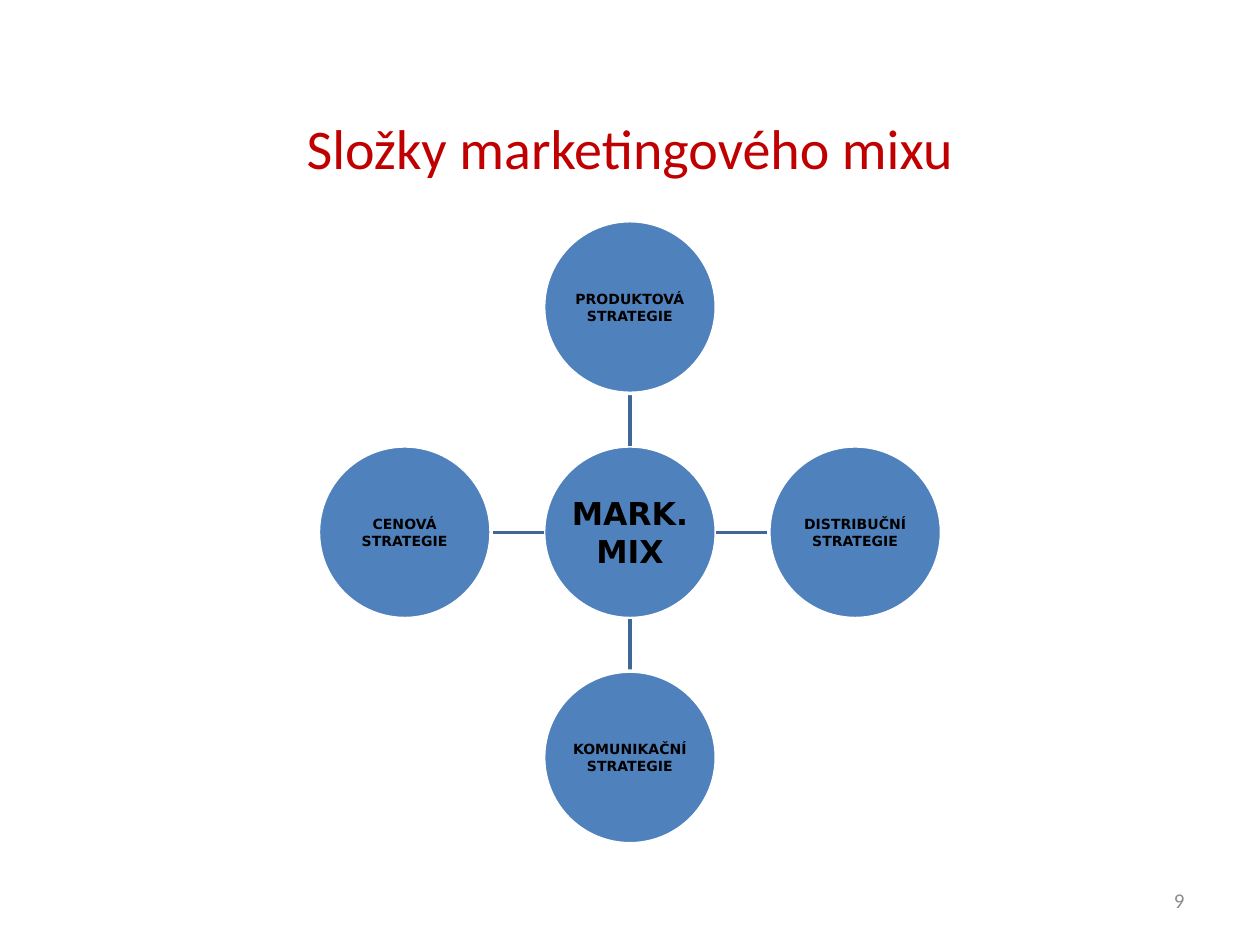
from lxml import etree
from pptx import Presentation
from pptx.dml.color import RGBColor
from pptx.enum import shapes, text
from pptx.oxml.ns import qn
from pptx.util import Cm, Pt

CENTER_X, CENTER_Y = 12.7, 10.73
DIAMETER = 3.48
SPACING = 4.54  # between the centres of neighbouring circles

# Direction from the hub, lines of the label
SPOKES = [
    (0, -1, ["PRODUKTOVÁ", "STRATEGIE"]),
    (1, 0, ["DISTRIBUČNÍ STRATEGIE"]),
    (0, 1, ["KOMUNIKAČNÍ", "STRATEGIE"]),
    (-1, 0, ["CENOVÁ", "STRATEGIE"]),
]


def color(value):
    return RGBColor.from_string(value)


def write(shape, lines, size, font, hue, align, bold=False):
    frame = shape.text_frame
    frame.word_wrap = True
    frame.vertical_anchor = text.MSO_ANCHOR.MIDDLE
    frame.text = "\n".join(lines)
    for paragraph in frame.paragraphs:
        paragraph.alignment = align
        paragraph.font.size = Pt(size)
        paragraph.font.name = font
        paragraph.font.bold = bold
        paragraph.font.color.rgb = color(hue)


def add_title(slide, title):
    shape = slide.shapes.title
    shape.left, shape.top, shape.width, shape.height = Cm(1.27), Cm(1.98), Cm(22.86), Cm(1.96)
    write(shape, [title], 32, "Calibri", "C00000", text.PP_ALIGN.CENTER)


def add_circle(slide, x, y, lines, size):
    shape = slide.shapes.add_shape(
        shapes.MSO_SHAPE.OVAL, Cm(x - DIAMETER / 2), Cm(y - DIAMETER / 2),
        Cm(DIAMETER), Cm(DIAMETER))
    shape.shadow.inherit = False
    shape.fill.solid()
    shape.fill.fore_color.rgb = color("4F81BD")
    shape.line.color.rgb = color("FFFFFF")
    shape.line.width = Pt(2)
    frame = shape.text_frame
    frame.margin_left = frame.margin_right = Cm(0.02)
    frame.margin_top = frame.margin_bottom = Cm(0.02)
    write(shape, lines, size, "DejaVu Sans", "000000", text.PP_ALIGN.CENTER, bold=True)


def add_spoke(slide, dx, dy):
    start, end = DIAMETER / 2, SPACING - DIAMETER / 2
    line = slide.shapes.add_connector(
        shapes.MSO_CONNECTOR.STRAIGHT,
        Cm(CENTER_X + dx * start), Cm(CENTER_Y + dy * start),
        Cm(CENTER_X + dx * end), Cm(CENTER_Y + dy * end))
    line.line.color.rgb = color("3F6797")
    line.line.width = Pt(2)
    etree.SubElement(line._element.spPr, qn("a:effectLst"))


def add_page_number(slide, number):
    box = slide.shapes.add_textbox(Cm(18.2), Cm(17.65), Cm(5.93), Cm(1.01))
    write(box, [number], 12, "Calibri", "8C8C8C", text.PP_ALIGN.RIGHT)


def main():
    presentation = Presentation()
    presentation.slide_width, presentation.slide_height = Cm(25.4), Cm(19.05)
    slide = presentation.slides.add_slide(presentation.slide_layouts[5])
    add_title(slide, "Složky marketingového mixu")

    # Hub with four strategies around it
    add_circle(slide, CENTER_X, CENTER_Y, ["MARK.", "MIX"], 18)
    for dx, dy, lines in SPOKES:
        add_spoke(slide, dx, dy)
        add_circle(slide, CENTER_X + dx * SPACING, CENTER_Y + dy * SPACING, lines, 8)

    add_page_number(slide, "9")
    presentation.save("out.pptx")


if __name__ == "__main__":
    main()
